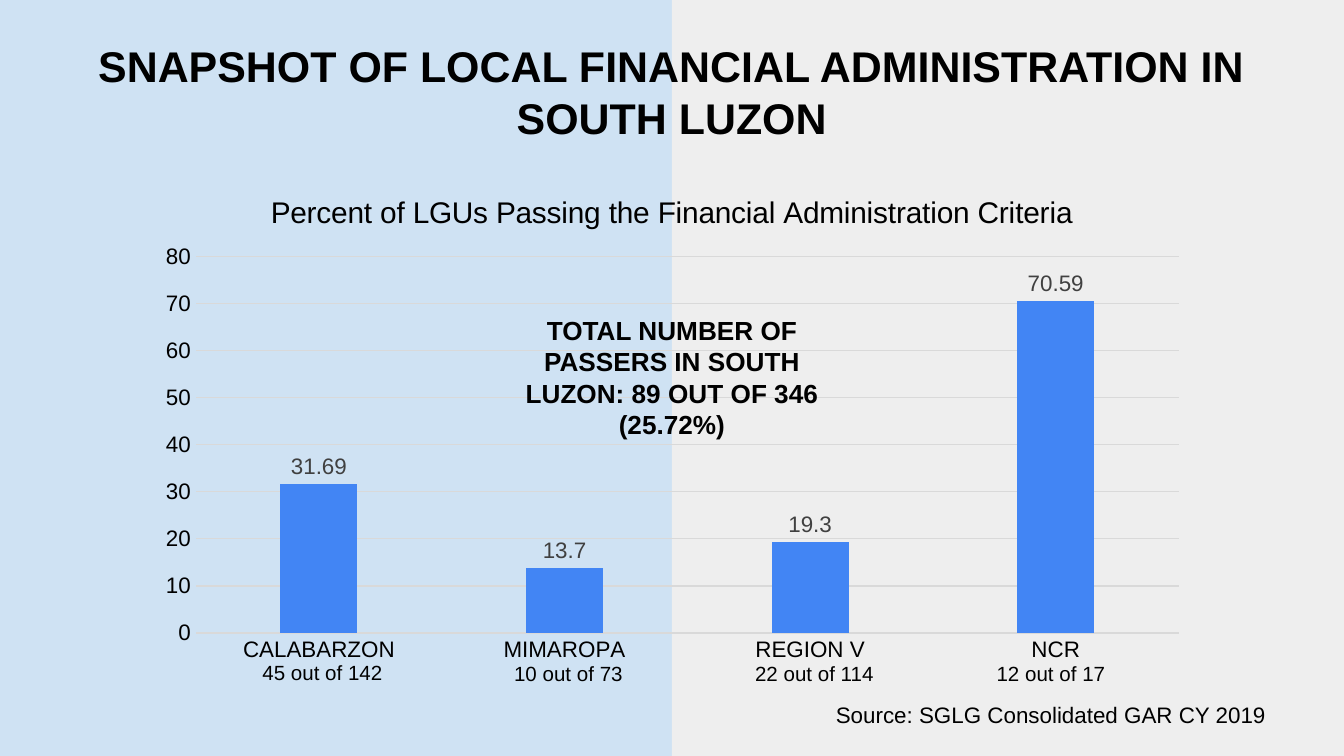
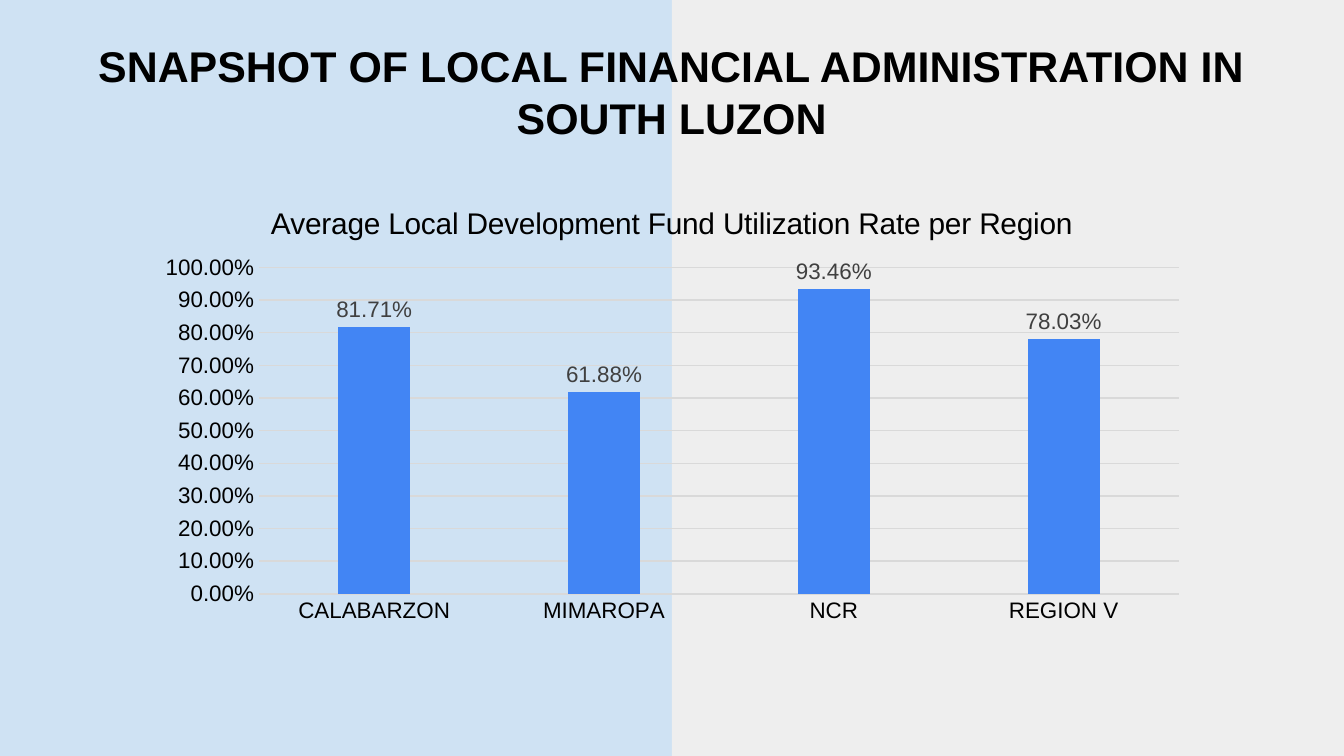
from dataclasses import dataclass

from pptx import Presentation
from pptx import util as u
from pptx.chart.data import CategoryChartData
from pptx.dml.color import RGBColor
from pptx.enum import chart as charts
from pptx.enum import shapes, text
from pptx.oxml import ns, parse_xml

Inches, Pt = u.Inches, u.Pt

# Shared look
COLORS = {
    "sky": "CFE2F3",
    "mist": "EEEEEE",
    "ink": "000000",
    "label": "404040",
    "grid": "D9D9D9",
    "bar": "4285F4",
}
FONT = "Arial"
WIDTH = 10
HEIGHT = WIDTH * 9 / 16
TITLE = "SNAPSHOT OF LOCAL FINANCIAL ADMINISTRATION IN SOUTH LUZON"


@dataclass
class Area:
    left: float
    top: float
    width: float
    height: float

    def inches(self) -> tuple:
        return tuple(Inches(n) for n in (self.left, self.top, self.width, self.height))


@dataclass
class Note:
    words: str
    area: Area
    size: int = 11
    bold: bool = False
    inset: float = 0.05


@dataclass
class RegionChart:
    heading: str
    area: Area
    plot: Area
    values: dict
    maximum: float
    step: float
    number_format: str = "General"


TITLE_AREA = Area(0.38, 0.19, 9.24, 0.98)

PASSING = RegionChart(
    "Percent of LGUs Passing the Financial Administration Criteria",
    Area(1.08, 1.28, 7.85, 3.72),
    Area(1.46, 1.91, 7.31, 2.8),
    {"CALABARZON": 31.69, "MIMAROPA": 13.7, "REGION V": 19.3, "NCR": 70.59},
    maximum=80,
    step=10,
)
UTILIZATION = RegionChart(
    "Average Local Development Fund Utilization Rate per Region",
    Area(1.08, 1.37, 7.85, 3.33),
    Area(1.93, 1.99, 6.84, 2.43),
    {"CALABARZON": 0.8171, "MIMAROPA": 0.6188, "NCR": 0.9346, "REGION V": 0.7803},
    maximum=1,
    step=0.1,
    number_format="0.00%",
)

COUNTS = [
    ("45 out of 142", 1.8, 4.86),
    ("10 out of 73", 3.63, 4.87),
    ("22 out of 114", 5.46, 4.87),
    ("12 out of 17", 7.22, 4.87),
]
PASSING_NOTES = [
    Note("Source: SGLG Consolidated GAR CY 2019", Area(5.96, 5.12, 3.72, 0.4), size=12, inset=0.1),
    *(Note(words, Area(left, top, 1.2, 0.29)) for words, left, top in COUNTS),
    Note("TOTAL NUMBER OF PASSERS IN SOUTH LUZON: 89 OUT OF 346 (25.72%)",
         Area(3.75, 2.29, 2.5, 1.04), size=14, bold=True),
]


def color(name: str) -> RGBColor:
    return RGBColor.from_string(COLORS[name])


def style_font(font, size: float, tint: str = "ink", bold: bool = False) -> None:
    font.name, font.size, font.bold = FONT, Pt(size), bold
    font.color.rgb = color(tint)


def write(frame, words: str, *, size: float, bold: bool = False) -> None:
    """Put one centred paragraph into a text frame."""
    frame.word_wrap = True
    para = frame.paragraphs[0]
    para.alignment = text.PP_ALIGN.CENTER
    span = para.add_run()
    span.text = words
    style_font(span.font, size, bold=bold)


def add_note(page, note: Note) -> None:
    box = page.shapes.add_textbox(*note.area.inches())
    frame = box.text_frame
    frame.margin_top = frame.margin_bottom = Inches(note.inset)
    write(frame, note.words, size=note.size, bold=note.bold)
    frame.auto_size = text.MSO_AUTO_SIZE.SHAPE_TO_FIT_TEXT


def set_layout(parent, index: int, target: str, **places: float) -> None:
    """Fix a chart part at fractions of the chart area."""
    for old in parent.findall(ns.qn("c:layout")):
        parent.remove(old)
    inner = f'<c:layoutTarget val="{target}"/>' if target else ""
    modes = "".join(f'<c:{key}Mode val="edge"/>' for key in ("x", "y"))
    sizes = "".join(f'<c:{key} val="{value:.4f}"/>' for key, value in places.items())
    parent.insert(index, parse_xml(
        f'<c:layout {ns.nsdecls("c")}><c:manualLayout>{inner}{modes}{sizes}'
        "</c:manualLayout></c:layout>"))


def style_axes(chart, model: RegionChart) -> None:
    for axis in (chart.category_axis, chart.value_axis):
        axis.major_tick_mark = axis.minor_tick_mark = charts.XL_TICK_MARK.NONE
        style_font(axis.tick_labels.font, 12)
    regions, scale = chart.category_axis, chart.value_axis
    scale.has_major_gridlines = True
    for line in (regions.format.line, scale.major_gridlines.format.line):
        line.color.rgb = color("grid")
        line.width = Pt(0.75)
    scale.format.line.fill.background()
    scale.minimum_scale, scale.maximum_scale = 0, model.maximum
    scale.major_unit = model.step
    scale.tick_labels.number_format = model.number_format
    scale.tick_labels.number_format_is_linked = False


def add_region_chart(page, model: RegionChart) -> None:
    data = CategoryChartData(number_format=model.number_format)
    data.categories = list(model.values)
    data.add_series("Series 1", list(model.values.values()))
    chart = page.shapes.add_chart(
        charts.XL_CHART_TYPE.COLUMN_CLUSTERED, *model.area.inches(), data).chart
    chart.has_legend = False
    style_font(chart.font, 10)
    style_axes(chart, model)

    # Heading
    chart.has_title = True
    write(chart.chart_title.text_frame, model.heading, size=16)
    set_layout(chart.chart_title.element, 1, "", x=0.114, y=0.032)

    # Bars and their labels
    bars = chart.plots[0]
    bars.gap_width, bars.overlap = 219, -27
    bars.vary_by_categories = False
    series = bars.series[0]
    series.format.fill.solid()
    series.format.fill.fore_color.rgb = color("bar")
    labels = series.data_labels
    labels.show_value = True
    labels.position = charts.XL_LABEL_POSITION.OUTSIDE_END
    labels.number_format = model.number_format
    labels.number_format_is_linked = False
    style_font(labels.font, 12, "label")

    # Plot position inside the chart
    area, plot = model.area, model.plot
    set_layout(
        chart.element.find(".//" + ns.qn("c:plotArea")), 0, "inner",
        x=(plot.left - area.left) / area.width,
        y=(plot.top - area.top) / area.height,
        w=plot.width / area.width,
        h=plot.height / area.height)


def add_page(deck, layout):
    page = deck.slides.add_slide(layout)
    title = page.shapes.title
    title.left, title.top, title.width, title.height = TITLE_AREA.inches()
    frame = title.text_frame
    frame.margin_left = frame.margin_right = Inches(0.1)
    frame.margin_top = frame.margin_bottom = Inches(0.1)
    frame.vertical_anchor = text.MSO_ANCHOR.MIDDLE
    frame.auto_size = text.MSO_AUTO_SIZE.NONE
    write(frame, TITLE, size=23, bold=True)
    frame.paragraphs[0].line_spacing = 1.0
    return page


def dress_layout(layout, page) -> None:
    """Give the layout its two-tone background."""
    layout.background.fill.solid()
    layout.background.fill.fore_color.rgb = color("sky")
    half = Area(WIDTH / 2, 0, WIDTH / 2, HEIGHT)
    panel = page.shapes.add_shape(shapes.MSO_SHAPE.RECTANGLE, *half.inches())
    panel.shadow.inherit = False
    panel.fill.solid()
    panel.fill.fore_color.rgb = color("mist")
    panel.line.fill.background()
    # Moved behind the layout's placeholders, so every page shares it
    layout.shapes.element.insert(2, panel.element)


def main() -> None:
    deck = Presentation()
    deck.slide_width, deck.slide_height = Inches(WIDTH), Inches(HEIGHT)
    layout = deck.slide_layouts.get_by_name("Title Only")

    # Passing rates
    passing = add_page(deck, layout)
    dress_layout(layout, passing)
    add_region_chart(passing, PASSING)
    for note in PASSING_NOTES:
        add_note(passing, note)

    # Fund utilization
    add_region_chart(add_page(deck, layout), UTILIZATION)

    deck.save("out.pptx")


if __name__ == "__main__":
    main()
